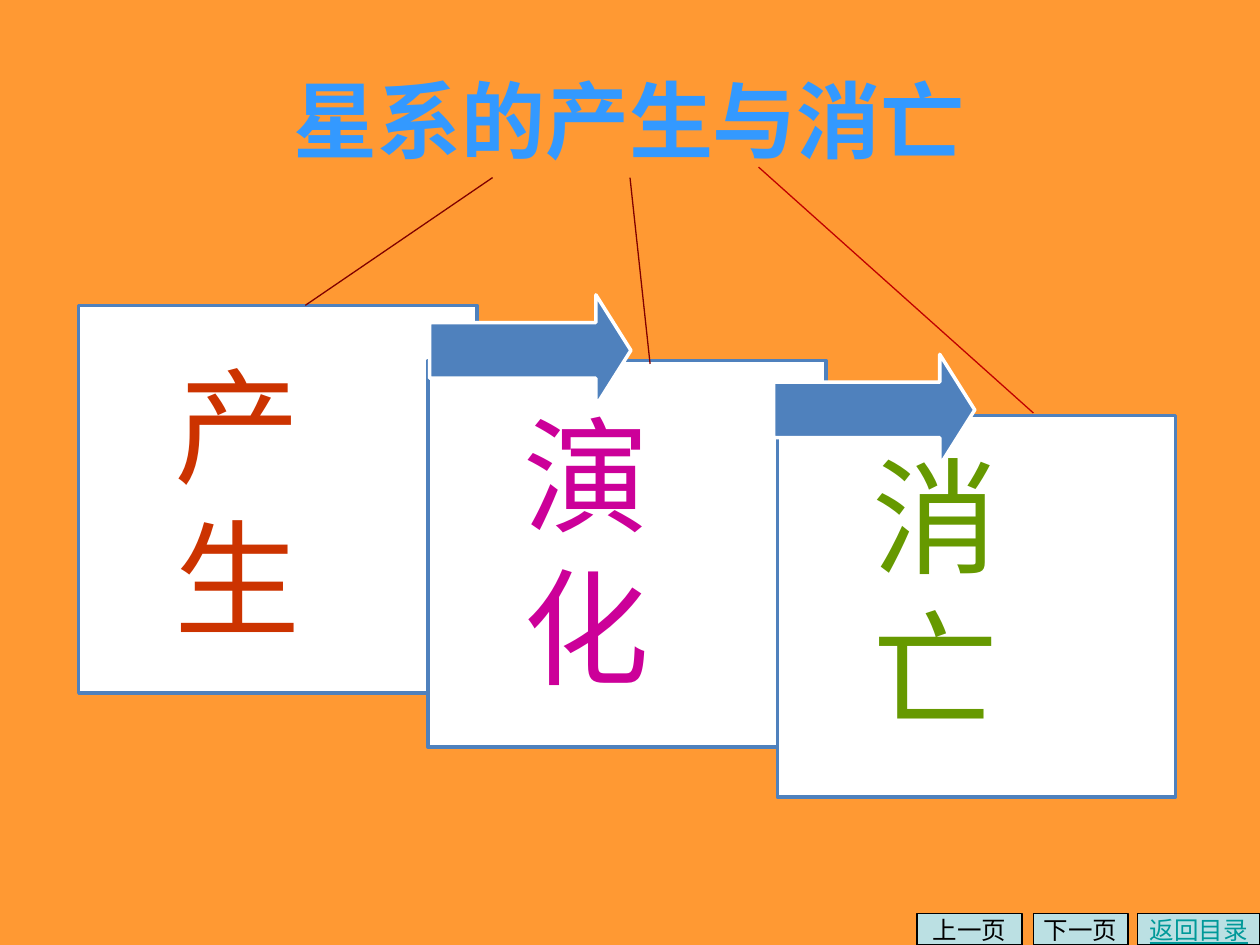
from lxml import etree
from pptx import Presentation
from pptx.dml.color import RGBColor
from pptx.enum.shapes import MSO_CONNECTOR, MSO_SHAPE
from pptx.enum.text import MSO_ANCHOR, PP_ALIGN
from pptx.oxml.ns import qn
from pptx.util import Pt

RECT, ARROW = MSO_SHAPE.RECTANGLE, MSO_SHAPE.RIGHT_ARROW
BUTTON, LINE = MSO_SHAPE.ACTION_BUTTON_CUSTOM, MSO_CONNECTOR.STRAIGHT
MIDDLE, CENTER, LEFT = MSO_ANCHOR.MIDDLE, PP_ALIGN.CENTER, PP_ALIGN.LEFT
CJK = "Noto Sans CJK JP"
COLORS = {
    "background": "FF9933", "title": "3399FF", "white": "FFFFFF", "blue": "4F81BD",
    "birth": "CC3300", "evolution": "CC0099", "death": "669900",
    "maroon": "800000", "red": "C00000",
    "button": "BBE0E3", "black": "000000", "link": "009999",
}


def rgb(name):
    """Return the named colour."""
    return RGBColor.from_string(COLORS[name])


def put_text(p, text, size, color, font=CJK, bold=False, underline=False, align=CENTER):
    """Fill a paragraph with one formatted run."""
    p.alignment = align
    r = p.add_run()
    r.text = text
    r.font.size, r.font.name = Pt(size), font
    r.font.bold, r.font.underline = bold, underline
    r.font.color.rgb = rgb(color)
    etree.SubElement(r.font._element, qn("a:ea"), typeface=CJK)


def set_margins(tf, left, top, right, bottom):
    """Set the four text insets."""
    tf.margin_left, tf.margin_top = Pt(left), Pt(top)
    tf.margin_right, tf.margin_bottom = Pt(right), Pt(bottom)


def add_box(s, kind, box, fill, line, width):
    """Add a filled and outlined preset shape without a shadow."""
    sp = s.shapes.add_shape(kind, *map(Pt, box))
    sp.shadow.inherit = False
    sp.fill.solid()
    sp.fill.fore_color.rgb = rgb(fill)
    sp.line.color.rgb = rgb(line)
    sp.line.width = Pt(width)
    return sp


def add_title(s, box, text):
    """Place the slide title."""
    sp = s.shapes.title
    sp.left, sp.top, sp.width, sp.height = map(Pt, box)
    tf = sp.text_frame
    tf.vertical_anchor = MIDDLE
    put_text(tf.paragraphs[0], text, 48, "title", font="Arial", bold=True)


def add_card(s, box, text_top, word, color):
    """Place a white card with its word set one character to a line."""
    add_box(s, RECT, box, "white", "blue", 2)
    left, _, width, height = box
    tf = s.shapes.add_textbox(Pt(left), Pt(text_top), Pt(width), Pt(height)).text_frame
    tf.word_wrap = True
    set_margins(tf, 54.5, 6.5, 6.5, 6.5)
    for i, char in enumerate(word):
        p = tf.add_paragraph() if i else tf.paragraphs[0]
        p.line_spacing, p.space_after = 0.9, Pt(9)
        put_text(p, char, 72, color, align=LEFT)


def add_arrow(s, box):
    """Place an arrow leading from one card to the next."""
    sp = add_box(s, ARROW, box, "blue", "white", 2)
    sp.adjustments[0], sp.adjustments[1] = 0.5, 0.315


def add_branch(s, start, end, color):
    """Draw a thin line from the title to a card."""
    c = s.shapes.add_connector(LINE, *map(Pt, start + end))
    c.line.color.rgb = rgb(color)
    c.line.width = Pt(0.75)
    etree.SubElement(c._element.spPr, qn("a:effectLst"))


def add_button(s, box, text, color, underline):
    """Place a navigation button."""
    sp = add_box(s, BUTTON, box, "button", "black", 1)
    tf = sp.text_frame
    tf.word_wrap = False
    tf.vertical_anchor = MIDDLE
    set_margins(tf, 0, 0, 0, 0)
    put_text(tf.paragraphs[0], text, 14, color, font="Times New Roman", underline=underline)


def main():
    """Build the slide and save it."""
    prs = Presentation()
    prs.slide_width, prs.slide_height = Pt(720), Pt(540)
    s = prs.slides.add_slide(prs.slide_layouts[5])
    s.background.fill.solid()
    s.background.fill.fore_color.rgb = rgb("background")
    add_title(s, (35.5, 23, 648, 90), "星系的产生与消亡")

    cards = [
        (174.5, 221.5, 202.5, "产生", "birth"),
        (206, 221, 230.5, "演化", "evolution"),
        (237.5, 218, 254, "消亡", "death"),
    ]
    for i, (top, height, text_top, word, color) in enumerate(cards):
        add_card(s, (45 + 199.6 * i, top, 227.5, height), text_top, word, color)

    for left, top in ((442, 202.5), (245.5, 168.5)):
        add_arrow(s, (left, top, 115, 63.5))

    add_branch(s, (281.5, 101.5), (174.5, 174.5), "maroon")
    add_branch(s, (360, 101.5), (371.5, 208), "maroon")
    add_branch(s, (433.5, 95.5), (590.5, 236), "red")

    buttons = [
        (650, 70, "返回目录", "link", True),
        (590.5, 54, "下一页", "black", False),
        (524, 60, "上一页", "black", False),
    ]
    for left, width, text, color, underline in buttons:
        add_button(s, (left, 522, width, 18), text, color, underline)
    prs.save("out.pptx")


if __name__ == "__main__":
    main()
